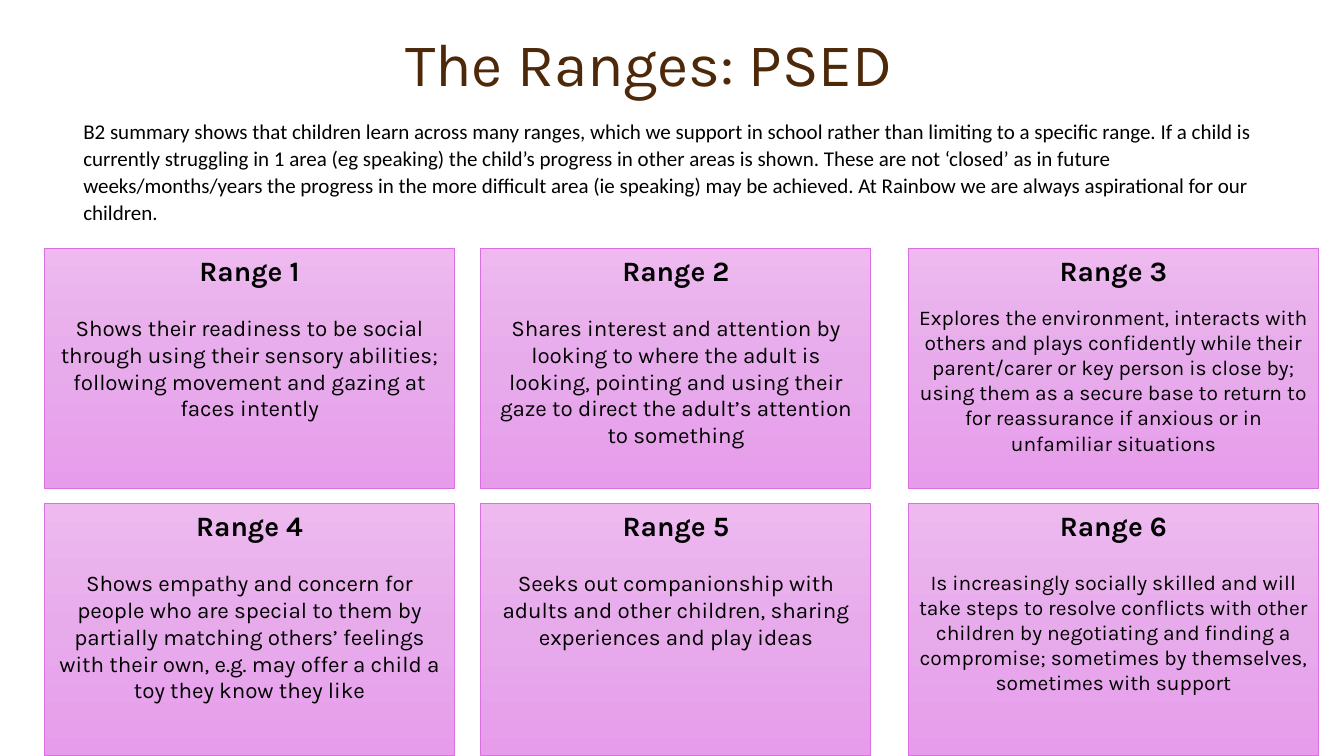
import copy

import pptx
import pptx.dml.color
import pptx.enum.shapes
import pptx.enum.text
import pptx.oxml.ns
import pptx.util

Cm = pptx.util.Cm
Pt = pptx.util.Pt
RGB = pptx.dml.color.RGBColor.from_string
ALIGN = pptx.enum.text.PP_ALIGN
ANCHOR = pptx.enum.text.MSO_ANCHOR

# Theme: colours, fonts and type sizes
THEME = {
    "brown": "4D290A", "black": "000000", "edge": "DA6FDF",
    "fade": [(0, "EDB9EF"), (0.5, "E7ABEB"), (1, "E79CEB")],
    "main": "Karla", "plain": "Calibri",
    "title": 43.2, "head": 20, "large": 16, "small": 15,
}


def write(para, text, size, font=THEME["main"], color=THEME["black"],
          bold=False, align=ALIGN.CENTER, before=0, after=0, line=1.0):
    para.alignment = align
    para.space_before = Pt(before)
    para.space_after = Pt(after)
    para.line_spacing = line
    run = para.add_run()
    run.text = text
    run.font.size = Pt(size)
    run.font.name = font
    run.font.bold = bold
    run.font.color.rgb = RGB(color)


deck = pptx.Presentation()
deck.slide_width, deck.slide_height = Cm(33.87), Cm(19.05)
slide = deck.slides.add_slide(deck.slide_layouts[5])

# Title
title = slide.shapes.title
title.left, title.top, title.width, title.height = (
    Cm(2.39), Cm(0.71), Cm(27.94), Cm(1.93))
title.text_frame.vertical_anchor = ANCHOR.BOTTOM
title.text_frame.auto_size = pptx.enum.text.MSO_AUTO_SIZE.NONE
write(title.text_frame.paragraphs[0], "The Ranges: PSED", THEME["title"],
      color=THEME["brown"], line=0.9)

# Cards: text, size and gap under the heading, row by row
LARGE, SMALL = THEME["large"], THEME["small"]
CARDS = [
    ("Shows their readiness to be social through using their sensory "
     "abilities; following movement and gazing at faces intently", LARGE, 19),
    ("Shares interest and attention by looking to where the adult is looking, "
     "pointing and using their gaze to direct the adult’s attention to "
     "something", LARGE, 19),
    ("Explores the environment, interacts with others and plays confidently "
     "while their parent/carer or key person is close by; using them as a "
     "secure base to return to for reassurance if anxious or in unfamiliar "
     "situations", SMALL, 12),
    ("Shows empathy and concern for people who are special to them by "
     "partially matching others’ feelings with their own, e.g. may offer a "
     "child a toy they know they like", LARGE, 19),
    ("Seeks out companionship with adults and other children, sharing "
     "experiences and play ideas", LARGE, 19),
    ("Is increasingly socially skilled and will take steps to resolve "
     "conflicts with other children by negotiating and finding a compromise; "
     "sometimes by themselves, sometimes with support", SMALL, 19),
]
COLS = [(1.12, 10.34), (12.12, 9.83), (22.89, 10.34)]  # left, width
ROWS = [(6.27, 6.05), (12.7, 6.35)]  # top, height

for num, (text, size, gap) in enumerate(CARDS):
    left, width = COLS[num % 3]
    top, height = ROWS[num // 3]
    card = slide.shapes.add_shape(
        pptx.enum.shapes.MSO_SHAPE.RECTANGLE,
        Cm(left), Cm(top), Cm(width), Cm(height))
    card.shadow.inherit = False
    card.line.color.rgb = RGB(THEME["edge"])
    card.line.width = Pt(0.75)

    # Three-stop fade from top to bottom
    card.fill.gradient()
    card.fill.gradient_angle = 270
    stops = card.element.spPr.find(".//" + pptx.oxml.ns.qn("a:gsLst"))
    stops.append(copy.deepcopy(stops[0]))
    for stop, (place, color) in zip(card.fill.gradient_stops, THEME["fade"]):
        stop.position = place
        stop.color.rgb = RGB(color)

    frame = card.text_frame
    frame.word_wrap = True
    frame.vertical_anchor = ANCHOR.TOP
    write(frame.paragraphs[0], f"Range {num + 1}", THEME["head"], bold=True)
    write(frame.add_paragraph(), text, size, before=gap)

# Summary
box = slide.shapes.add_textbox(Cm(1.85), Cm(2.69), Cm(30.38), Cm(3.23))
frame = box.text_frame
frame.word_wrap = True
frame.margin_left = frame.margin_right = Cm(0.25)
frame.margin_top = frame.margin_bottom = Cm(0.25)
write(frame.paragraphs[0],
      "B2 summary shows that children learn across many ranges, which we "
      "support in school rather than limiting to a specific range. If a child "
      "is currently struggling in 1 area (eg speaking) the child’s progress "
      "in other areas is shown. These are not ‘closed’ as in future "
      "weeks/months/years the progress in the more difficult area (ie "
      "speaking) may be achieved. At Rainbow we are always aspirational for "
      "our children.",
      SMALL, font=THEME["plain"], align=ALIGN.LEFT, after=8, line=1.07)

deck.save("out.pptx")
